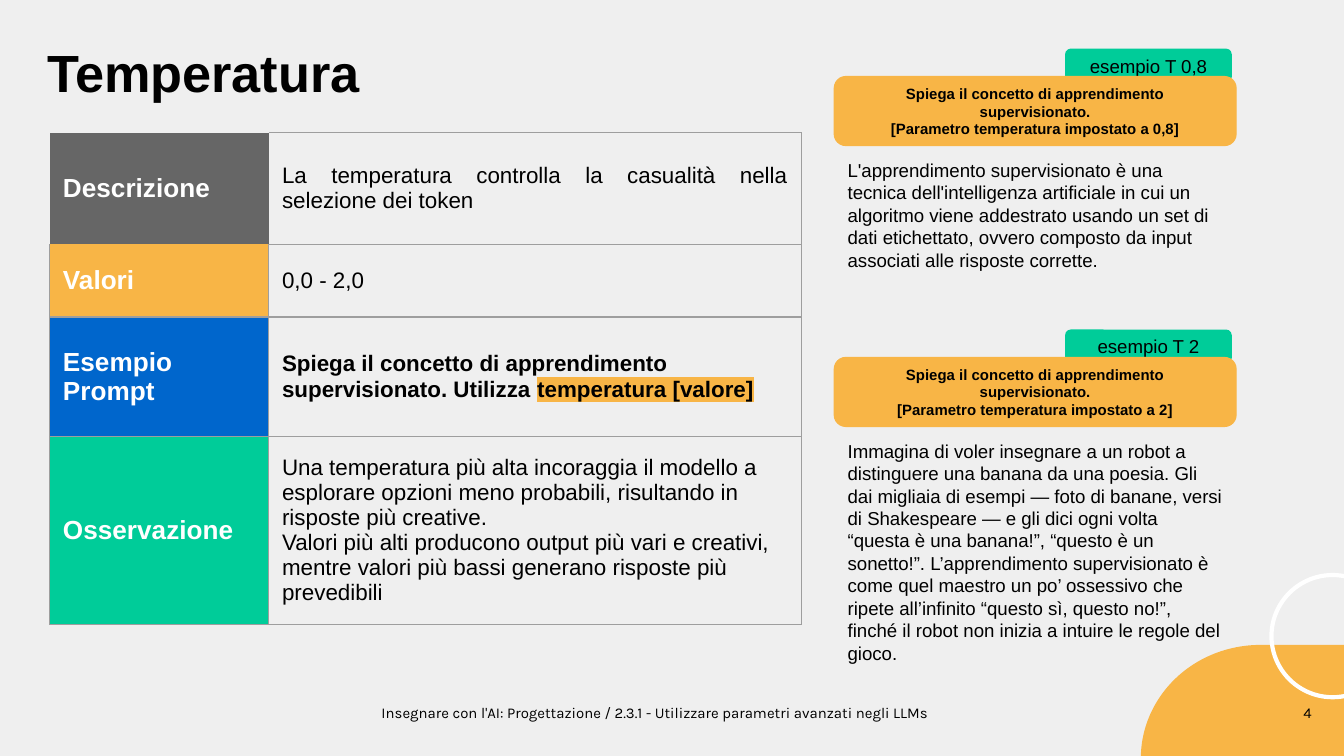
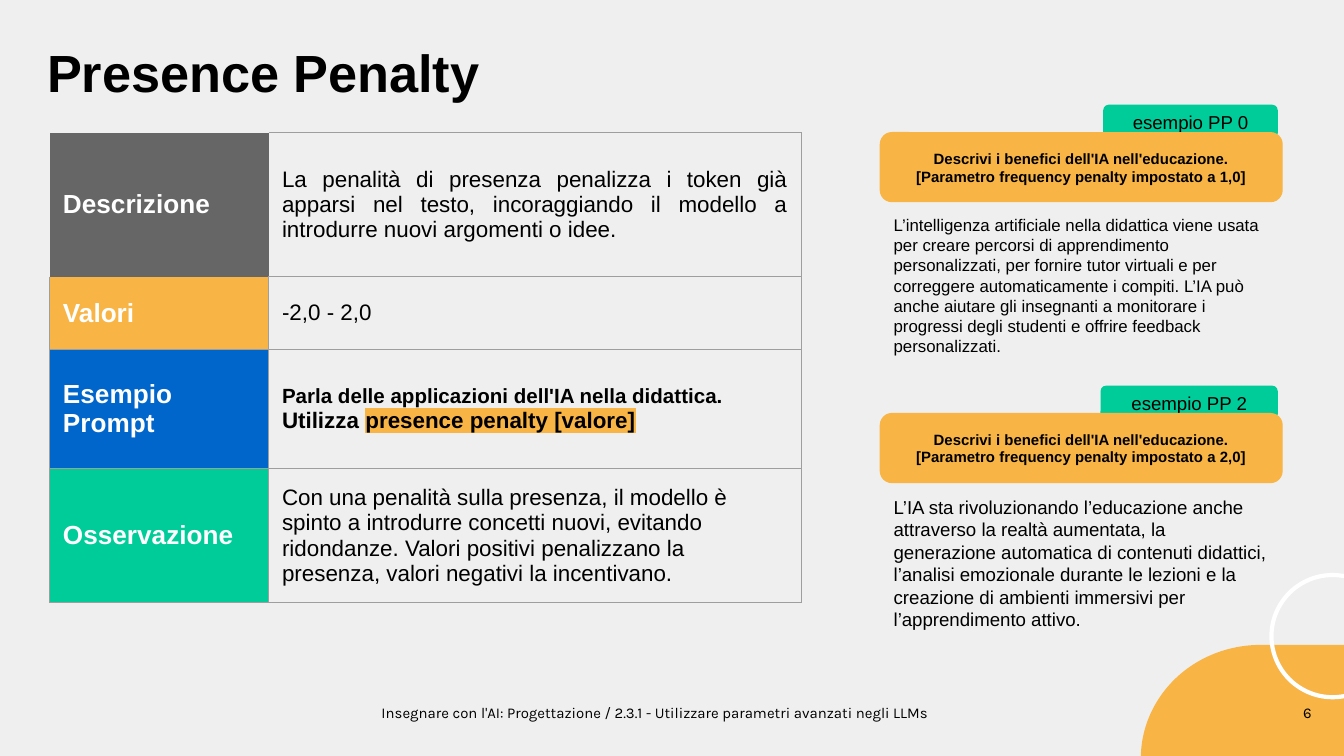
from lxml.etree import SubElement
from pptx import Presentation
from pptx.dml.color import RGBColor
from pptx.enum.shapes import MSO_SHAPE
from pptx.enum.text import MSO_ANCHOR, MSO_AUTO_SIZE, PP_ALIGN
from pptx.oxml import parse_xml
from pptx.oxml.ns import nsdecls, qn
from pptx.util import Cm, Pt

PAPER = RGBColor(0xEF, 0xEF, 0xEF)
BLACK = RGBColor(0, 0, 0)
WHITE = RGBColor(0xFF, 0xFF, 0xFF)
GREY = RGBColor(0x66, 0x66, 0x66)
BORDER = RGBColor(0x9E, 0x9E, 0x9E)
ORANGE = RGBColor(0xF8, 0xB5, 0x46)
BLUE = RGBColor(0x00, 0x66, 0xCC)
GREEN = RGBColor(0x00, 0xCC, 0x99)

FOOTER = "Insegnare con l'AI: Progettazione / 2.3.1 - Utilizzare parametri avanzati negli LLMs"
ROW_HEADS = [("Descrizione", GREY), ("Valori", ORANGE), ("Esempio Prompt", BLUE), ("Osservazione", GREEN)]
COL_WIDTHS = [4.14, 10.06]
OPEN_CELLS = {(0, 0): "", (0, 1): "RTB", (1, 0): "LRB"}
BOX_W, BOX_H, TAG_H = 7.59, 1.3, 0.64
EXAMPLE_STEP = 5.31


def add_text(p, text, size=12, color=BLACK, bold=False, font="Arial", highlight=None):
    for i, line in enumerate(text.split("\n")):
        if i:
            p.add_line_break()
        r = p.add_run()
        r.text = line
        r.font.size = Pt(size)
        r.font.bold = bold
        r.font.color.rgb = color
        if highlight:
            mark = SubElement(r._r.get_or_add_rPr(), qn("a:highlight"))
            SubElement(mark, qn("a:srgbClr"), val=str(highlight))
        r.font.name = font


class Deck:
    def __init__(self):
        self.prs = Presentation()
        self.prs.slide_width = Cm(25.4)
        self.prs.slide_height = Cm(14.29)
        fill = self.prs.slide_master.background.fill
        fill.solid()
        fill.fore_color.rgb = PAPER
        self.s = None

    def slide(self, title, number):
        self.s = self.prs.slides.add_slide(self.prs.slide_layouts[6])
        self.text(0.97, 13.13, 22.83, 0.74, FOOTER, inset=0.18, align=PP_ALIGN.CENTER, size=8, font="Karla")
        corner = self.shape(MSO_SHAPE.FLOWCHART_DELAY, 21.56, 12.19, 4.52, 4.29, fill=ORANGE)
        corner.rotation = 180
        self.shape(MSO_SHAPE.OVAL, 24.03, 10.87, 2.31, 2.31, line=WHITE, weight=2.25)
        self.text(23.42, 13.13, 1.55, 1.17, str(number), inset=0.18, align=PP_ALIGN.RIGHT, size=8, font="Karla")
        self.text(0.64, 0.46, 22.78, 1.78, title, anchor=MSO_ANCHOR.MIDDLE, size=28, bold=True)

    def fill_frame(self, tf, text, inset=0.25, align=PP_ALIGN.LEFT, anchor=MSO_ANCHOR.TOP, **fmt):
        tf.word_wrap = True
        tf.margin_left = tf.margin_right = tf.margin_top = tf.margin_bottom = Cm(inset)
        tf.vertical_anchor = anchor
        p = tf.paragraphs[0]
        p.alignment = align
        add_text(p, text, **fmt)

    def text(self, x, y, w, h, text, grow=False, **fmt):
        sp = self.s.shapes.add_textbox(Cm(x), Cm(y), Cm(w), Cm(h))
        self.fill_frame(sp.text_frame, text, **fmt)
        if grow:
            sp.text_frame.auto_size = MSO_AUTO_SIZE.SHAPE_TO_FIT_TEXT

    def shape(self, kind, x, y, w, h, fill=None, line=None, weight=0.75, text=None, **fmt):
        sp = self.s.shapes.add_shape(kind, Cm(x), Cm(y), Cm(w), Cm(h))
        sp.shadow.inherit = False
        if fill:
            sp.fill.solid()
            sp.fill.fore_color.rgb = fill
        else:
            sp.fill.background()
        if line:
            sp.line.color.rgb = line
            sp.line.width = Pt(weight)
        else:
            sp.line.fill.background()
        if text:
            self.fill_frame(sp.text_frame, text, align=PP_ALIGN.CENTER, anchor=MSO_ANCHOR.MIDDLE, **fmt)
        return sp

    def borders(self, cell, visible):
        tcPr = cell._tc.get_or_add_tcPr()
        for side in "LRTB":
            paint = f'<a:solidFill><a:srgbClr val="{BORDER}"/></a:solidFill>' if side in visible else "<a:noFill/>"
            tcPr.append(parse_xml(f'<a:ln{side} {nsdecls("a")} w="{Pt(0.75)}">{paint}</a:ln{side}>'))

    def cell(self, table, row, col, runs, fill=None, **fmt):
        cell = table.cell(row, col)
        cell.margin_left = cell.margin_right = cell.margin_top = cell.margin_bottom = Cm(0.25)
        cell.vertical_anchor = MSO_ANCHOR.MIDDLE
        self.borders(cell, OPEN_CELLS.get((row, col), "LRTB"))
        if fill:
            cell.fill.solid()
            cell.fill.fore_color.rgb = fill
        else:
            cell.fill.background()
        p = cell.text_frame.paragraphs[0]
        p.alignment = PP_ALIGN.LEFT if row else PP_ALIGN.JUSTIFY
        for text, extra in runs:
            add_text(p, text, **{**fmt, **extra})

    def table(self, first_height, description, values, prompt, remark):
        heights = [first_height, 1.37, 2.26, 2.26]
        table = self.s.shapes.add_table(
            len(heights), len(COL_WIDTHS), Cm(0.94), Cm(2.51), Cm(sum(COL_WIDTHS)), Cm(sum(heights))).table
        table.first_row = table.horz_banding = False
        for column, width in zip(table.columns, COL_WIDTHS):
            column.width = Cm(width)
        contents = [[(description, {})], [(values, {})], prompt, [(remark, {})]]
        for i, ((head, color), runs) in enumerate(zip(ROW_HEADS, contents)):
            table.rows[i].height = Cm(heights[i])
            self.cell(table, i, 0, [(head, {})], fill=color, size=14, color=WHITE, bold=True)
            self.cell(table, i, 1, runs)

    def examples(self, x, y, items):
        for i, (tag, tag_w, prompt, answer, answer_h, size) in enumerate(items):
            top = y + i * EXAMPLE_STEP
            self.shape(MSO_SHAPE.ROUNDED_RECTANGLE, x + BOX_W - 0.08 - tag_w, top - 0.53, tag_w, TAG_H,
                       fill=GREEN, text=tag, size=10)
            self.shape(MSO_SHAPE.ROUNDED_RECTANGLE, x, top, BOX_W, BOX_H,
                       fill=ORANGE, line=ORANGE, text=prompt, size=8, bold=True)
            self.text(x, top + BOX_H, BOX_W, answer_h, answer, grow=True, size=size)


def main():
    deck = Deck()
    strong = {"bold": True}
    marked = {"bold": True, "highlight": ORANGE}

    deck.slide("Temperatura", 4)
    deck.table(
        2.11,
        "La temperatura controlla la casualità nella selezione dei token",
        "0,0 - 2,0",
        [("Spiega il concetto di apprendimento supervisionato. Utilizza ", strong),
         ("temperatura [valore]", marked)],
        "Una temperatura più alta incoraggia il modello a esplorare opzioni meno probabili, "
        "risultando in risposte più creative.\n"
        "Valori più alti producono output più vari e creativi, mentre valori più bassi "
        "generano risposte più prevedibili")
    request = "Spiega il concetto di apprendimento supervisionato.\n[Parametro temperatura impostato a {}]"
    deck.examples(15.77, 1.45, [
        ("esempio T 0,8", 3.15, request.format("0,8"),
         "L'apprendimento supervisionato è una tecnica dell'intelligenza artificiale in cui un algoritmo "
         "viene addestrato usando un set di dati etichettato, ovvero composto da input associati alle "
         "risposte corrette.", 3.07, 10),
        ("esempio T 2", 3.15, request.format("2"),
         "Immagina di voler insegnare a un robot a distinguere una banana da una poesia. Gli dai migliaia "
         "di esempi — foto di banane, versi di Shakespeare — e gli dici ogni volta “questa è una banana!”, "
         "“questo è un sonetto!”. L’apprendimento supervisionato è come quel maestro un po’ ossessivo che "
         "ripete all’infinito “questo sì, questo no!”, finché il robot non inizia a intuire le regole del "
         "gioco.", 4.8, 10)])

    deck.slide("Presence Penalty", 6)
    deck.table(
        2.72,
        "La penalità di presenza penalizza i token già apparsi nel testo, incoraggiando il modello a "
        "introdurre nuovi argomenti o idee.",
        "-2,0 - 2,0",
        [("Parla delle applicazioni dell'IA nella didattica. ", {"bold": True, "size": 11}),
         ("Utilizza ", strong),
         ("presence penalty [valore]", marked)],
        "Con una penalità sulla presenza, il modello è spinto a introdurre concetti nuovi, evitando "
        "ridondanze. Valori positivi penalizzano la presenza, valori negativi la incentivano.")
    request = "Descrivi i benefici dell'IA nell'educazione.\n[Parametro frequency penalty impostato a {}]"
    deck.examples(16.64, 2.51, [
        ("esempio PP 0", 3.3, request.format("1,0"),
         "L’intelligenza artificiale nella didattica viene usata per creare percorsi di apprendimento "
         "personalizzati, per fornire tutor virtuali e per correggere automaticamente i compiti. L’IA può "
         "anche aiutare gli insegnanti a monitorare i progressi degli studenti e offrire feedback "
         "personalizzati.", 3.2, 9),
        ("esempio PP 2", 3.35, request.format("2,0"),
         "L’IA sta rivoluzionando l’educazione anche attraverso la realtà aumentata, la generazione "
         "automatica di contenuti didattici, l’analisi emozionale durante le lezioni e la creazione di "
         "ambienti immersivi per l’apprendimento attivo.", 3.07, 10)])

    deck.prs.save("out.pptx")


if __name__ == "__main__":
    main()
